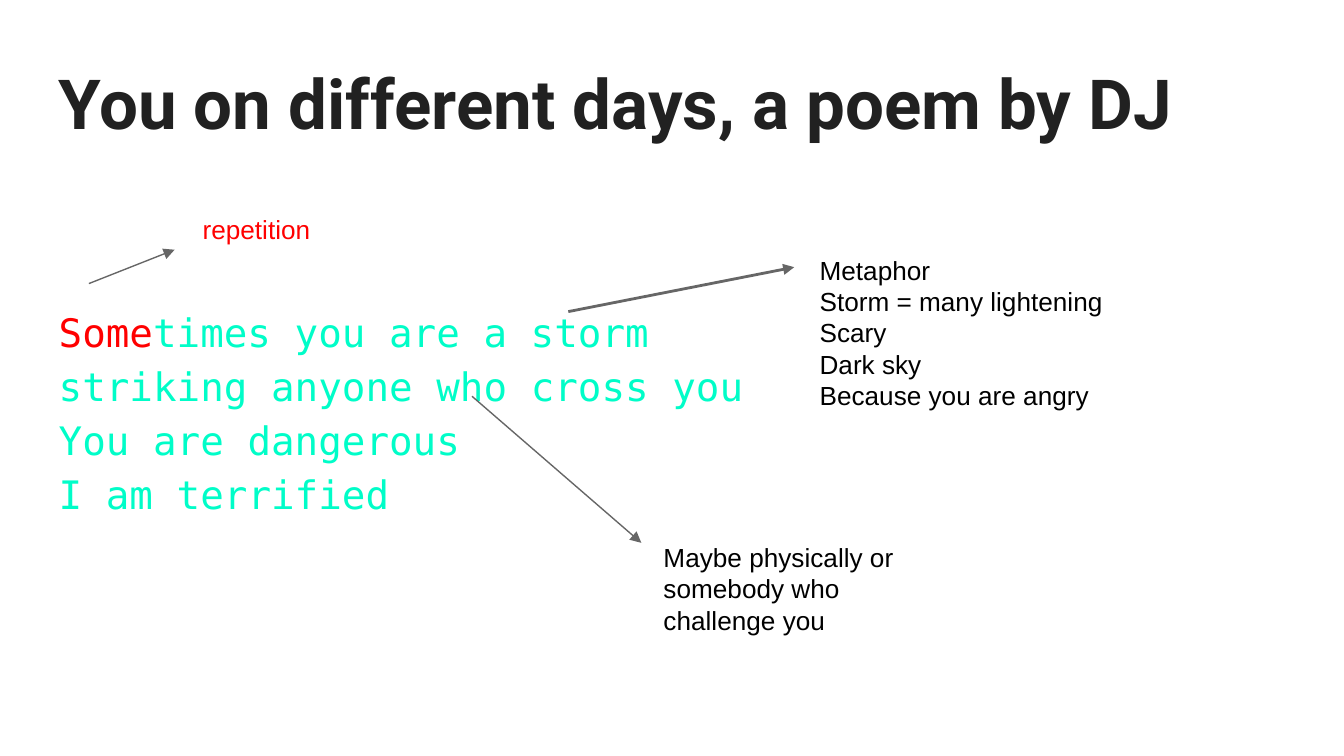
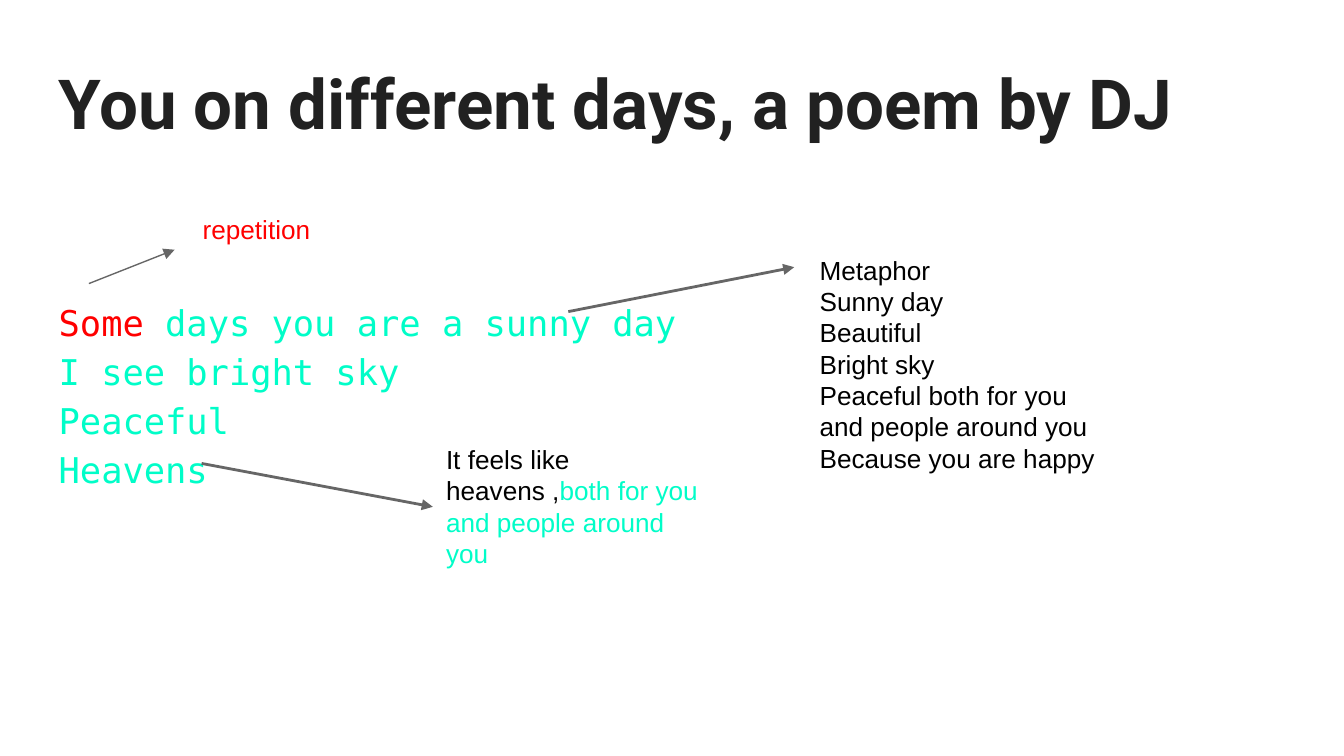
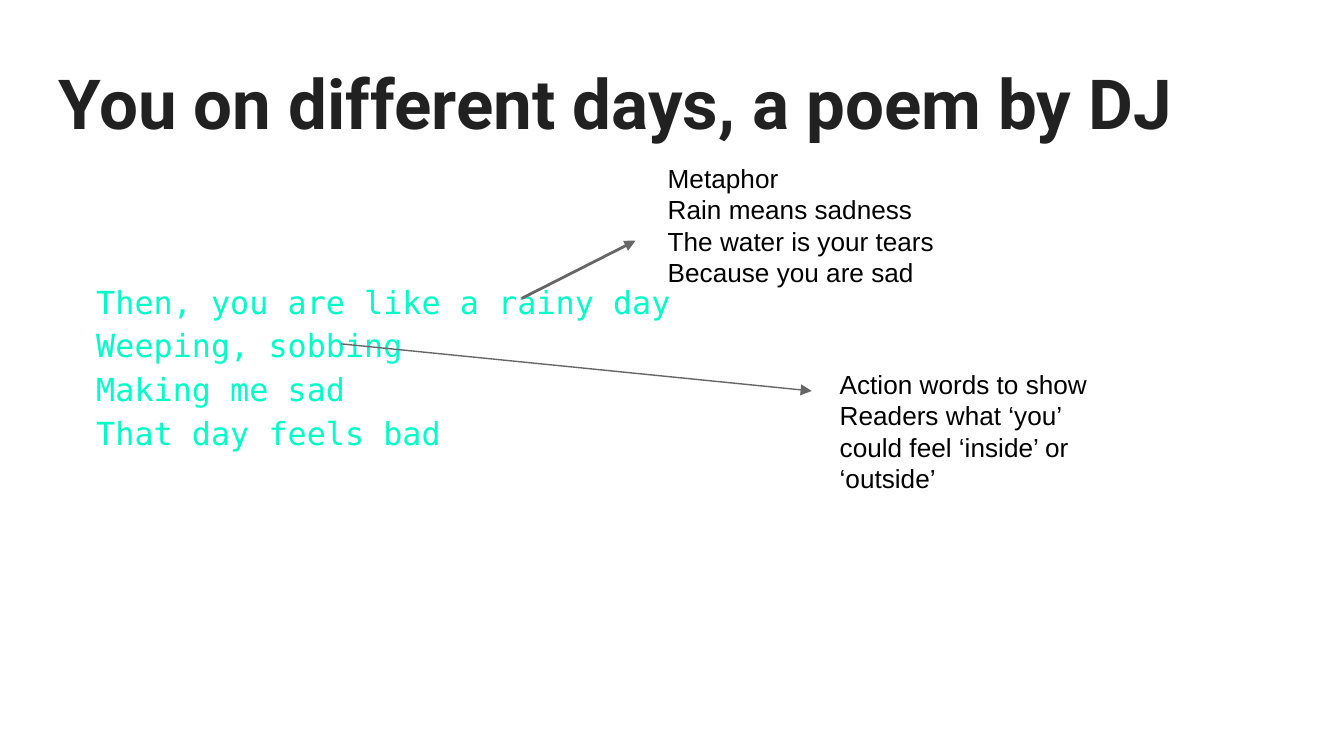
from dataclasses import dataclass

from lxml.etree import SubElement
from pptx import Presentation
from pptx.dml.color import RGBColor
from pptx.enum.shapes import MSO_CONNECTOR as ConnectorKind
from pptx.enum.text import MSO_ANCHOR as Anchor, MSO_AUTO_SIZE as AutoSize
from pptx.oxml.ns import qn
from pptx.slide import Slide
from pptx.util import Cm, Pt

TITLE = "You on different days, a poem by DJ"
INK, BLACK, RED, MINT, GRAY = "212121", "000000", "FF0000", "00FDC8", "666666"
INSET = Cm(0.25)
FRAME_FORMAT = {
    "word_wrap": True,
    "margin_left": INSET,
    "margin_right": INSET,
    "margin_top": INSET,
    "margin_bottom": INSET,
}
TITLE_FONT = {"name": "Roboto", "size": Pt(37), "bold": True}
NOTE_FONT = {"name": "Arial", "size": Pt(14)}
POEM_FONT = {"name": "DejaVu Sans Mono"}

Span = tuple[str, str]
Line = list[Span]
Area = tuple[float, float, float, float]


@dataclass(frozen=True)
class Poem:
    """A verse with its type size and the space above its first line."""
    lines: list[Line]
    size: int
    top_inset: float
    area: Area = (0.86, 3.4, 23.67, 9.27)


@dataclass(frozen=True)
class Note:
    """A remark about one part of the verse."""
    area: Area
    lines: list[Line]


@dataclass(frozen=True)
class Arrow:
    """A pointer from a word to its note."""
    start: tuple[float, float]
    end: tuple[float, float]
    weight: float = 0.75


@dataclass(frozen=True)
class PoemPage:
    """The verse, notes and arrows of one slide."""
    poem: Poem
    notes: list[Note]
    arrows: list[Arrow]


def color(code: str) -> RGBColor:
    """Turn a hex string into a colour."""
    return RGBColor.from_string(code)


def plain(text: str, code: str) -> list[Line]:
    """Split text into lines of a single colour."""
    return [[(line, code)] for line in text.split("\n")]


def apply_format(target: object, values: dict) -> None:
    """Set each named attribute on the target."""
    for name, value in values.items():
        setattr(target, name, value)


def add_text(page: Slide, area: Area, lines: list[Line], font: dict,
             frame_format: dict, spacing: float = 1.0) -> None:
    """Draw a text box of coloured spans."""
    box = page.shapes.add_textbox(*map(Cm, area))
    frame = box.text_frame
    apply_format(frame, FRAME_FORMAT | frame_format)
    for index, line in enumerate(lines):
        para = frame.add_paragraph() if index else frame.paragraphs[0]
        para.line_spacing = spacing
        for text, code in line:
            span = para.add_run()
            span.text = text
            apply_format(span.font, font)
            span.font.color.rgb = color(code)


def add_title(page: Slide) -> None:
    """Draw the shared title."""
    add_text(page, (0.86, 0.81, 23.67, 2.24), plain(TITLE, INK), TITLE_FONT,
             {"vertical_anchor": Anchor.MIDDLE})


def add_poem(page: Slide, poem: Poem) -> None:
    """Draw the verse."""
    add_text(page, poem.area, poem.lines, POEM_FONT | {"size": Pt(poem.size)},
             {"margin_top": Cm(poem.top_inset)}, 1.15)


def add_note(page: Slide, note: Note) -> None:
    """Draw a remark that grows with its text."""
    add_text(page, note.area, note.lines, NOTE_FONT,
             {"auto_size": AutoSize.SHAPE_TO_FIT_TEXT})


def add_arrow(page: Slide, arrow: Arrow) -> None:
    """Draw a straight arrow without a shadow."""
    connector = page.shapes.add_connector(
        ConnectorKind.STRAIGHT, *map(Cm, arrow.start + arrow.end))
    connector.line.color.rgb = color(GRAY)
    connector.line.width = Pt(arrow.weight)
    SubElement(connector.line._get_or_add_ln(), qn("a:tailEnd"), type="triangle")
    SubElement(connector._element.spPr, qn("a:effectLst"))


REPETITION_NOTE = Note((3.58, 3.78, 4.7, 1.07), plain("repetition", RED))
REPETITION_ARROW = Arrow((1.68, 5.36), (3.3, 4.72))
METAPHOR_ARROW = Arrow((10.74, 5.89), (15.01, 5.05), 1.5)

PAGES = [
    PoemPage(
        Poem([[("Some", RED), ("times you are a storm", MINT)],
              *plain("striking anyone who cross you\nYou are dangerous\n"
                     "I am terrified", MINT)], 21, 2.29),
        [REPETITION_NOTE,
         Note((15.24, 4.55, 5.92, 3.3),
              plain("Metaphor\nStorm = many lightening\nScary\nDark sky\n"
                    "Because you are angry", BLACK)),
         Note((12.29, 9.98, 5.59, 2.18),
              plain("Maybe physically or somebody who challenge you", BLACK))],
        [REPETITION_ARROW, METAPHOR_ARROW, Arrow((8.92, 7.49), (12.12, 10.26))],
    ),
    PoemPage(
        Poem([[("Some ", RED), ("days you are a sunny day", MINT)],
              *plain("I see bright sky\nPeaceful\nHeavens", MINT)], 19, 2.17),
        [REPETITION_NOTE,
         Note((15.24, 4.55, 5.92, 4.45),
              plain("Metaphor\nSunny day\nBeautiful\nBright sky\n"
                    "Peaceful both for you and people around you\n"
                    "Because you are happy", BLACK)),
         Note((8.18, 8.13, 5.36, 3.3),
              [[("It feels like heavens ,", BLACK),
                ("both for you and people around you", MINT)]])],
        [REPETITION_ARROW, METAPHOR_ARROW,
         Arrow((3.81, 8.76), (8.18, 9.58), 1.5)],
    ),
    PoemPage(
        Poem(plain("Then, you are like a rainy day\nWeeping, sobbing\n"
                   "Making me sad\nThat day feels bad", MINT),
             17, 1.95, (1.57, 3.28, 23.67, 9.5)),
        [Note((15.62, 6.71, 5.59, 2.74),
              plain("Action words to show\nReaders what ‘you’ could feel "
                    "‘inside’ or ‘outside’", BLACK)),
         Note((12.37, 2.82, 5.92, 2.74),
              plain("Metaphor\nRain means sadness\nThe water is your tears\n"
                    "Because you are sad", BLACK))],
        [Arrow((6.45, 6.5), (15.34, 7.39)),
         Arrow((9.86, 5.64), (12.01, 4.55), 1.5)],
    ),
]


def main() -> None:
    """Build and save the deck."""
    deck = Presentation()
    apply_format(deck, {"slide_width": Cm(25.4), "slide_height": Cm(14.29)})
    for content in PAGES:
        page = deck.slides.add_slide(deck.slide_layouts[6])
        add_title(page)
        add_poem(page, content.poem)
        for arrow in content.arrows:
            add_arrow(page, arrow)
        for note in content.notes:
            add_note(page, note)
    deck.save("out.pptx")


if __name__ == "__main__":
    main()
